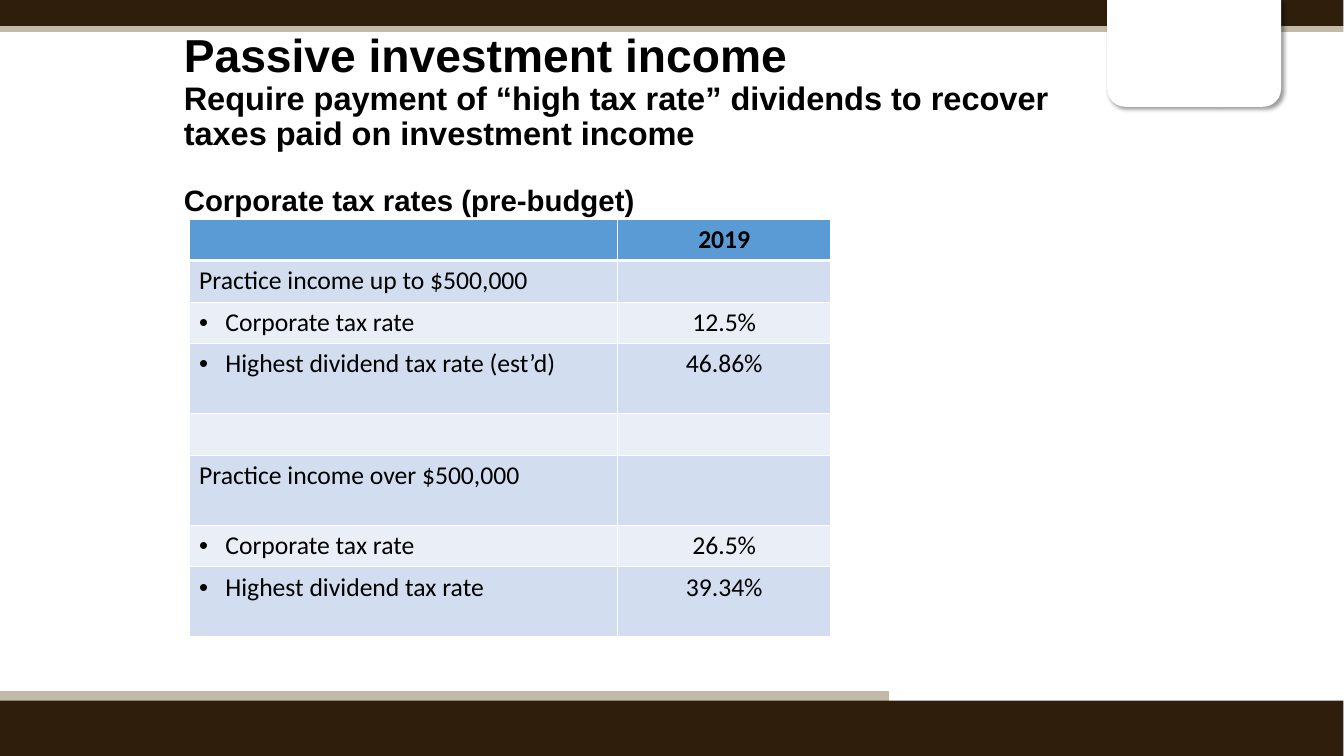
from dataclasses import dataclass

from lxml import etree
from pptx import Presentation
from pptx import util as u
from pptx.dml.color import RGBColor
from pptx.enum import shapes, text
from pptx.oxml import ns


@dataclass(frozen=True)
class Theme:
    dark: str = "2F1E0C"
    sand: str = "C2B9A6"
    white: str = "FFFFFF"
    black: str = "000000"
    header: str = "5B9BD5"
    bands: tuple = ("D2DEEF", "EAEFF7")
    heading_font: str = "Arial"
    table_font: str = "Calibri"
    title_size: float = 39.6
    subtitle_size: float = 27.9
    caption_size: float = 25.2
    table_size: float = 22


def add_element(parent, tag, **attributes):
    return etree.SubElement(parent, ns.qn(tag), {k: str(v) for k, v in attributes.items()})


def write(paragraph, words, *, font, size, color, bold=False, align=None,
          line_spacing=None, before=0, bullet_indent=0):
    if bullet_indent:
        properties = paragraph._p.get_or_add_pPr()
        properties.set("marL", str(u.Pt(bullet_indent)))
        properties.set("indent", str(-u.Pt(bullet_indent)))
        add_element(properties, "a:buFont", typeface="Arial")
        add_element(properties, "a:buChar", char="•")
    if line_spacing:
        paragraph.line_spacing = line_spacing
    if before:
        paragraph.space_before = u.Pt(before)
    paragraph.alignment = align
    paragraph.font.size = u.Pt(size)
    run = paragraph.add_run()
    run.text = words
    run.font.name = font
    run.font.size = u.Pt(size)
    run.font.bold = bold
    run.font.color.rgb = RGBColor.from_string(color)


class SlideBuilder:
    def __init__(self, slide, theme):
        self.slide = slide
        self.theme = theme

    def block(self, left, top, width, height, color, kind=shapes.MSO_SHAPE.RECTANGLE):
        shape = self.slide.shapes.add_shape(kind, *map(u.Pt, (left, top, width, height)))
        shape.shadow.inherit = False
        shape.fill.solid()
        shape.fill.fore_color.rgb = RGBColor.from_string(color)
        shape.line.fill.background()
        return shape

    def tab(self, left, top, width, height):
        shape = self.block(left, top, width, height, self.theme.white,
                           shapes.MSO_SHAPE.ROUND_2_SAME_RECTANGLE)
        shape.rotation = 180
        effects = shape._element.spPr.find(ns.qn("a:effectLst"))
        shadow = add_element(effects, "a:outerShdw", blurRad=u.Pt(4), dist=u.Pt(3),
                             dir=45 * 60000, algn="tl", rotWithShape=0)
        color = add_element(shadow, "a:srgbClr", val=self.theme.black)
        add_element(color, "a:alpha", val=40000)

    def heading(self, left, top, width, height, lines):
        box = self.slide.shapes.add_textbox(*map(u.Pt, (left, top, width, height)))
        frame = box.text_frame
        frame.word_wrap = True
        frame.vertical_anchor = text.MSO_ANCHOR.MIDDLE
        for index, (words, size, before) in enumerate(lines):
            paragraph = frame.add_paragraph() if index else frame.paragraphs[0]
            write(paragraph, words, font=self.theme.heading_font, size=size, bold=True,
                  color=self.theme.black, line_spacing=0.9, before=before)

    def borders(self, cell, row):
        properties = cell._tc.get_or_add_tcPr()
        for side in "LRTB":
            thick = (row, side) in ((0, "B"), (1, "T"))
            line = add_element(properties, f"a:ln{side}", w=u.Pt(3 if thick else 1))
            fill = add_element(line, "a:solidFill")
            add_element(fill, "a:srgbClr", val=self.theme.white)

    def table(self, left, top, widths, heights, rows):
        theme = self.theme
        frame = self.slide.shapes.add_table(
            len(rows), len(widths),
            *map(u.Pt, (left, top, sum(widths), sum(heights))))
        table = frame.table
        for column, width in zip(table.columns, widths):
            column.width = u.Pt(width)
        for row, height in zip(table.rows, heights):
            row.height = u.Pt(height)
        for r, (label, value, bulleted) in enumerate(rows):
            for c, words in enumerate((label, value)):
                cell = table.cell(r, c)
                cell.margin_left = cell.margin_right = u.Pt(8.4)
                cell.margin_top = cell.margin_bottom = u.Pt(4.2)
                self.borders(cell, r)
                cell.fill.solid()
                color = theme.bands[(r - 1) % 2] if r else theme.header
                cell.fill.fore_color.rgb = RGBColor.from_string(color)
                if words:
                    write(cell.text_frame.paragraphs[0], words, font=theme.table_font,
                          size=theme.table_size, color=theme.black, bold=r == 0,
                          align=text.PP_ALIGN.CENTER if c else text.PP_ALIGN.LEFT,
                          bullet_indent=22.5 if bulleted and c == 0 else 0)


def main():
    theme = Theme()
    presentation = Presentation()
    presentation.slide_width, presentation.slide_height = u.Pt(1152), u.Pt(648)
    slide = presentation.slides.add_slide(presentation.slide_layouts[6])
    builder = SlideBuilder(slide, theme)

    # Top and bottom bands, with the white tab
    builder.block(-0.5, 21.6, 1152, 5.8, theme.sand)
    builder.block(-0.5, 0, 1152, 22.3, theme.dark)
    builder.block(-0.5, 592.5, 762.5, 12, theme.sand)
    builder.block(-0.5, 600.5, 1152, 48, theme.dark)
    builder.tab(949, -0.5, 149, 92)

    # Heading
    builder.heading(150.5, 52, 822, 111, [
        ("Passive investment income", theme.title_size, 0),
        ("Require payment of “high tax rate” dividends to recover "
         "taxes paid on investment income", theme.subtitle_size, 0),
        ("Corporate tax rates (pre-budget)", theme.caption_size, 29),
    ])

    # Tax rates: label, value, bulleted
    short, tall = 35.5, 60.2
    builder.table(162.3, 188, (367, 183),
                  (short, short, short, tall, short, tall, short, tall), [
        ("", "2019", False),
        ("Practice income up to $500,000", "", False),
        ("Corporate tax rate", "12.5%", True),
        ("Highest dividend tax rate (est’d)", "46.86%", True),
        ("", "", False),
        ("Practice income over $500,000", "", False),
        ("Corporate tax rate", "26.5%", True),
        ("Highest dividend tax rate", "39.34%", True),
    ])

    presentation.save("out.pptx")


if __name__ == "__main__":
    main()
